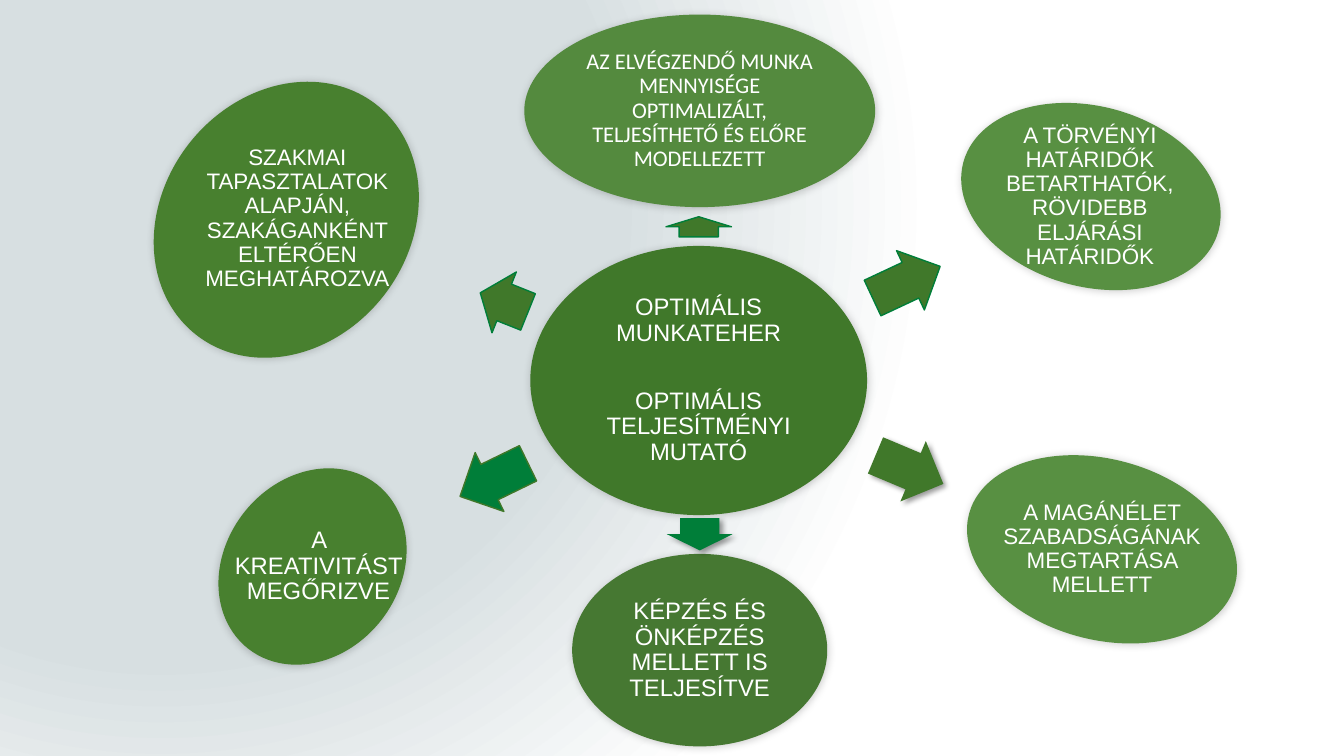
"""Build a slide of a central goal circled by six conditions."""
import pptx
import pptx.dml.color
import pptx.enum.shapes
import pptx.enum.text
import pptx.oxml
import pptx.util
import pptx.oxml.ns

Inches = pptx.util.Inches
Pt = pptx.util.Pt
SHAPES = pptx.enum.shapes.MSO_SHAPE

GREEN, EMERALD = "40782A", "007E39"
SOFT_SHADOW = (20, 6, 1, 45)
STRONG_SHADOW = (40, 4, 3, 45)

# centre, size, rotation, fill, shadow (opacity, blur, distance, angle)
BUBBLES = [
    ((6.93, 3.775), (3.34, 2.67), 0, GREEN, SOFT_SHADOW),
    ((6.94, 1.1), (3.48, 1.91), 0, "548A3E", SOFT_SHADOW),
    ((10.82, 1.95), (2.62, 1.79), 15, "589042", SOFT_SHADOW),
    ((10.93, 5.45), (2.73, 1.79), 15, "589042", SOFT_SHADOW),
    ((6.94, 6.45), (2.53, 1.91), 0, "467832", SOFT_SHADOW),
    ((3.1, 5.62), (2.07, 1.73), -52, "48802F", (20, 6, 1, 135)),
    ((2.84, 2.18), (2.9, 2.45), -52, "48802F", (20, 6, 0, 225)),
]

# centre, length, rotation, fill, line, shadow
ARROWS = [
    ((6.93, 2.25), 0.2, 270, GREEN, EMERALD, None),
    ((8.99, 2.8), 0.74, 334.9, GREEN, EMERALD, None),
    ((9.02, 4.66), 0.73, 22.8, GREEN, None, STRONG_SHADOW),
    ((6.94, 5.3), 0.32, 90, EMERALD, None, STRONG_SHADOW),
    ((4.9, 4.76), 0.75, 154, EMERALD, GREEN, None),
    ((5.0, 3.0), 0.51, 201.8, GREEN, EMERALD, None),
]
ARROW_WIDTH = 0.65

# paragraphs, centre, size, font size, font
LABELS = [
    (["OPTIMÁLIS MUNKATEHER", "OPTIMÁLIS TELJESÍTMÉNYI MUTATÓ"],
     (6.93, 3.775), (2.36, 1.89), 17, "Arial"),
    (["AZ ELVÉGZENDŐ MUNKA MENNYISÉGE OPTIMALIZÁLT, TELJESÍTHETŐ ÉS ELŐRE MODELLEZETT"],
     (6.94, 1.1), (2.46, 1.35), 16, "Calibri"),
    (["A TÖRVÉNYI HATÁRIDŐK BETARTHATÓK, RÖVIDEBB ELJÁRÁSI HATÁRIDŐK"],
     (10.81, 1.95), (2.01, 1.35), 16, "Arial"),
    (["A MAGÁNÉLET SZABADSÁGÁNAK MEGTARTÁSA MELLETT"],
     (10.93, 5.45), (2.09, 1.35), 16, "Arial"),
    (["KÉPZÉS ÉS ÖNKÉPZÉS MELLETT IS TELJESÍTVE"],
     (6.94, 6.45), (1.79, 1.35), 17, "Arial"),
    (["A KREATIVITÁST MEGŐRIZVE"],
     (3.16, 5.62), (1.83, 1.35), 17, "Arial"),
    (["SZAKMAI TAPASZTALATOK ALAPJÁN, SZAKÁGANKÉNT ELTÉRŐEN MEGHATÁROZVA"],
     (2.95, 2.17), (2.57, 1.9), 16, "Arial"),
]


def color(value):
    return pptx.dml.color.RGBColor.from_string(value)


def box(center, size):
    left, top = (middle - length / 2 for middle, length in zip(center, size))
    return [Inches(length) for length in (left, top, *size)]


def paint_background(slide):
    slide.background.fill.gradient()
    gradient = slide.background._cSld.find(".//" + pptx.oxml.ns.qn("a:gradFill"))
    gradient.getparent().replace(gradient, pptx.oxml.parse_xml(
        f'<a:gradFill {pptx.oxml.ns.nsdecls("a")} rotWithShape="1"><a:gsLst>'
        '<a:gs pos="59000"><a:srgbClr val="D7DFE1"/></a:gs>'
        '<a:gs pos="100000"><a:srgbClr val="FFFFFF"/></a:gs></a:gsLst>'
        '<a:path path="circle"><a:fillToRect l="50000" t="55000" r="125000" b="100000"/>'
        '</a:path></a:gradFill>'))


def add_shadow(shape, opacity, blur, distance, angle):
    effects = shape._element.spPr.find(pptx.oxml.ns.qn("a:effectLst"))
    effects.append(pptx.oxml.parse_xml(
        f'<a:outerShdw {pptx.oxml.ns.nsdecls("a")} blurRad="{Pt(blur)}" '
        f'dist="{Pt(distance)}" dir="{angle * 60000}" algn="ctr" rotWithShape="0">'
        f'<a:srgbClr val="000000"><a:alpha val="{opacity * 1000}"/></a:srgbClr>'
        '</a:outerShdw>'))


def add_figure(slide, kind, center, size, rotation, fill, line=None, shadow=None):
    shape = slide.shapes.add_shape(kind, *box(center, size))
    shape.rotation = rotation
    shape.fill.solid()
    shape.fill.fore_color.rgb = color(fill)
    if line:
        shape.line.color.rgb = color(line)
        shape.line.width = Pt(1)
    else:
        shape.line.fill.background()
    shape.shadow.inherit = False
    if shadow:
        add_shadow(shape, *shadow)
    return shape


def add_text(slide, paragraphs, center, size, font_size=16, font="Arial",
             font_color="FFFFFF", gap=30):
    frame = slide.shapes.add_textbox(*box(center, size)).text_frame
    frame.word_wrap = True
    frame.vertical_anchor = pptx.enum.text.MSO_ANCHOR.MIDDLE
    frame.margin_left = frame.margin_right = Inches(0.02)
    frame.margin_top = frame.margin_bottom = Inches(0.02)
    for index, text in enumerate(paragraphs):
        paragraph = frame.add_paragraph() if index else frame.paragraphs[0]
        paragraph.alignment = pptx.enum.text.PP_ALIGN.CENTER
        paragraph.line_spacing = 0.9
        paragraph.space_before = Pt(gap if index else 0)
        run = paragraph.add_run()
        run.text = text
        run.font.size = Pt(font_size)
        run.font.name = font
        run.font.color.rgb = color(font_color)


def main():
    presentation = pptx.Presentation()
    presentation.slide_width = Inches(13.33)
    presentation.slide_height = Inches(7.5)
    slide = presentation.slides.add_slide(presentation.slide_layouts[6])
    paint_background(slide)
    for center, size, rotation, fill, shadow in BUBBLES:
        add_figure(slide, SHAPES.OVAL, center, size, rotation, fill, shadow=shadow)
    for center, length, rotation, fill, line, shadow in ARROWS:
        arrow = add_figure(slide, SHAPES.RIGHT_ARROW, center, (length, ARROW_WIDTH),
                           rotation, fill, line, shadow)
        arrow.adjustments[0] = 0.6
        arrow.adjustments[1] = 0.5
    for paragraphs, center, size, font_size, font in LABELS:
        add_text(slide, paragraphs, center, size, font_size=font_size, font=font)
    presentation.save("out.pptx")


if __name__ == "__main__":
    main()
